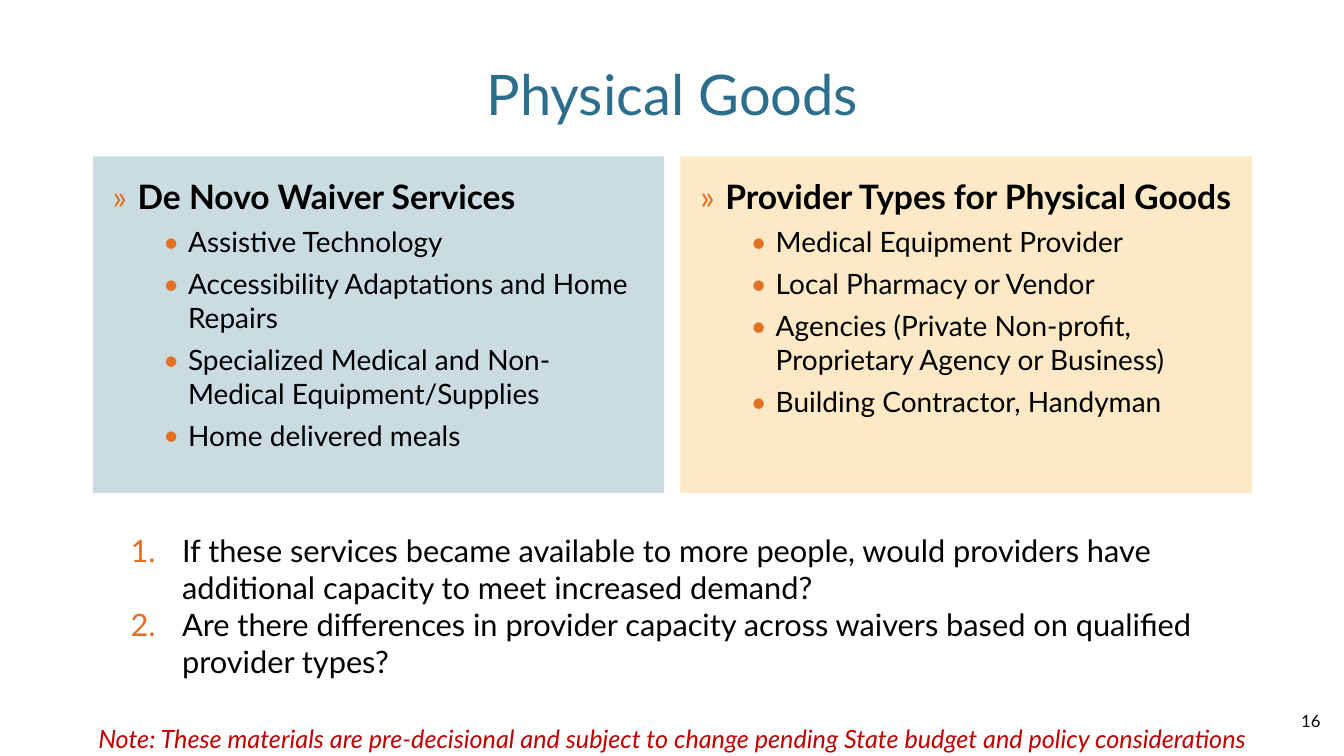
from lxml.etree import SubElement
from pptx import Presentation
from pptx.dml.color import RGBColor
from pptx.enum.shapes import MSO_SHAPE as Shape
from pptx.enum.text import MSO_ANCHOR as Anchor, PP_ALIGN as Align
from pptx.oxml.ns import qn
from pptx.util import Cm, Pt

TEAL = RGBColor(0x2D, 0x6E, 0x8D)
ORANGE = RGBColor(0xE3, 0x71, 0x24)
PALE_BLUE = RGBColor(0xCA, 0xDC, 0xE2)
PALE_AMBER = RGBColor(0xFD, 0xE9, 0xC6)
RED = RGBColor(0xC0, 0x00, 0x00)
BLACK = RGBColor(0, 0, 0)

PANEL_LEFT, PANEL_TOP = 2.34, 3.94
PANEL_WIDTH, PANEL_HEIGHT, PANEL_GAP = 14.4, 8.48, 0.41

PANELS = [
    (PALE_BLUE, "De Novo Waiver Services", [
        "Assistive Technology",
        "Accessibility Adaptations and Home Repairs",
        "Specialized Medical and Non-Medical Equipment/Supplies",
        "Home delivered meals",
    ]),
    (PALE_AMBER, "Provider Types for Physical Goods", [
        "Medical Equipment Provider",
        "Local Pharmacy or Vendor",
        "Agencies (Private Non-profit, Proprietary Agency or Business)",
        "Building Contractor, Handyman",
    ]),
]
QUESTIONS = [
    "If these services became available to more people, would providers have "
    "additional capacity to meet increased demand?",
    "Are there differences in provider capacity across waivers based on "
    "qualified provider types?",
]
NOTE = ("Note: These materials are pre-decisional and subject to change "
        "pending State budget and policy considerations")


class GoodsSlide:
    font_name = "Lato"

    def __init__(self, deck):
        self.slide = deck.slides.add_slide(deck.slide_layouts[5])

    def set_text(self, paragraph, text, size, color=BLACK, bold=False,
                 italic=False, align=Align.LEFT):
        paragraph.text = text
        paragraph.alignment = align
        font = paragraph.font
        font.name, font.size = self.font_name, Pt(size)
        font.bold, font.italic = bold, italic
        font.color.rgb = color

    def mark(self, paragraph, margin, hang, tag, **settings):
        properties = paragraph._p.get_or_add_pPr()
        properties.set("marL", str(Cm(margin)))
        properties.set("indent", str(-Cm(hang)))
        color = SubElement(properties, qn("a:buClr"))
        SubElement(color, qn("a:srgbClr"), val=str(ORANGE))
        SubElement(properties, qn("a:buFont"), typeface=self.font_name)
        SubElement(properties, qn(tag), **settings)

    def title(self, text, left, top, width, height):
        title = self.slide.shapes.title
        title.left, title.top = Cm(left), Cm(top)
        title.width, title.height = Cm(width), Cm(height)
        title.text_frame.vertical_anchor = Anchor.MIDDLE
        self.set_text(title.text_frame.paragraphs[0], text, 40, TEAL,
                      align=Align.CENTER)

    def panel(self, left, fill, heading, items):
        panel = self.slide.shapes.add_shape(
            Shape.RECTANGLE, Cm(left), Cm(PANEL_TOP),
            Cm(PANEL_WIDTH), Cm(PANEL_HEIGHT))
        panel.shadow.inherit = False
        panel.fill.solid()
        panel.fill.fore_color.rgb = fill
        panel.line.fill.background()
        frame = panel.text_frame
        frame.word_wrap = True
        frame.vertical_anchor = Anchor.TOP
        frame.margin_left = frame.margin_right = frame.margin_top = Cm(0.5)
        frame.margin_bottom = Cm(0.13)
        first = frame.paragraphs[0]
        self.mark(first, 0.63, 0.63, "a:buChar", char="»")
        self.set_text(first, heading, 24, bold=True)
        for item in items:
            paragraph = frame.add_paragraph()
            paragraph.level = 1
            self.mark(paragraph, 1.9, 0.63, "a:buChar", char="•")
            self.set_text(paragraph, item, 20)
        for paragraph in frame.paragraphs:
            paragraph.space_after = Pt(6)

    def text_box(self, left, top, width, height, anchor=Anchor.TOP):
        box = self.slide.shapes.add_textbox(
            Cm(left), Cm(top), Cm(width), Cm(height))
        box.text_frame.word_wrap = True
        box.text_frame.vertical_anchor = anchor
        return box.text_frame

    def text(self, text, left, top, width, height, size,
             anchor=Anchor.TOP, **style):
        frame = self.text_box(left, top, width, height, anchor)
        self.set_text(frame.paragraphs[0], text, size, **style)

    def numbered(self, lines, left, top, width, height):
        frame = self.text_box(left, top, width, height, Anchor.MIDDLE)
        for index, line in enumerate(lines):
            paragraph = frame.add_paragraph() if index else frame.paragraphs[0]
            self.mark(paragraph, 1.88, 1.3, "a:buAutoNum", type="arabicPeriod")
            self.set_text(paragraph, line, 22)


def main():
    deck = Presentation()
    deck.slide_width, deck.slide_height = Cm(33.87), Cm(19.05)
    goods = GoodsSlide(deck)
    goods.title("Physical Goods", 2.34, 1.02, 29.21, 2.67)
    for column, (fill, heading, items) in enumerate(PANELS):
        left = PANEL_LEFT + column * (PANEL_WIDTH + PANEL_GAP)
        goods.panel(left, fill, heading, items)
    goods.numbered(QUESTIONS, 2.46, 13.16, 29.36, 4.19)
    goods.text(NOTE, 0.36, 18.11, 33.17, 0.71, 18, color=RED, italic=True,
               align=Align.CENTER)
    goods.text("16", 25.91, 17.65, 7.62, 1.02, 12, Anchor.MIDDLE,
               align=Align.RIGHT)
    deck.save("out.pptx")


if __name__ == "__main__":
    main()
